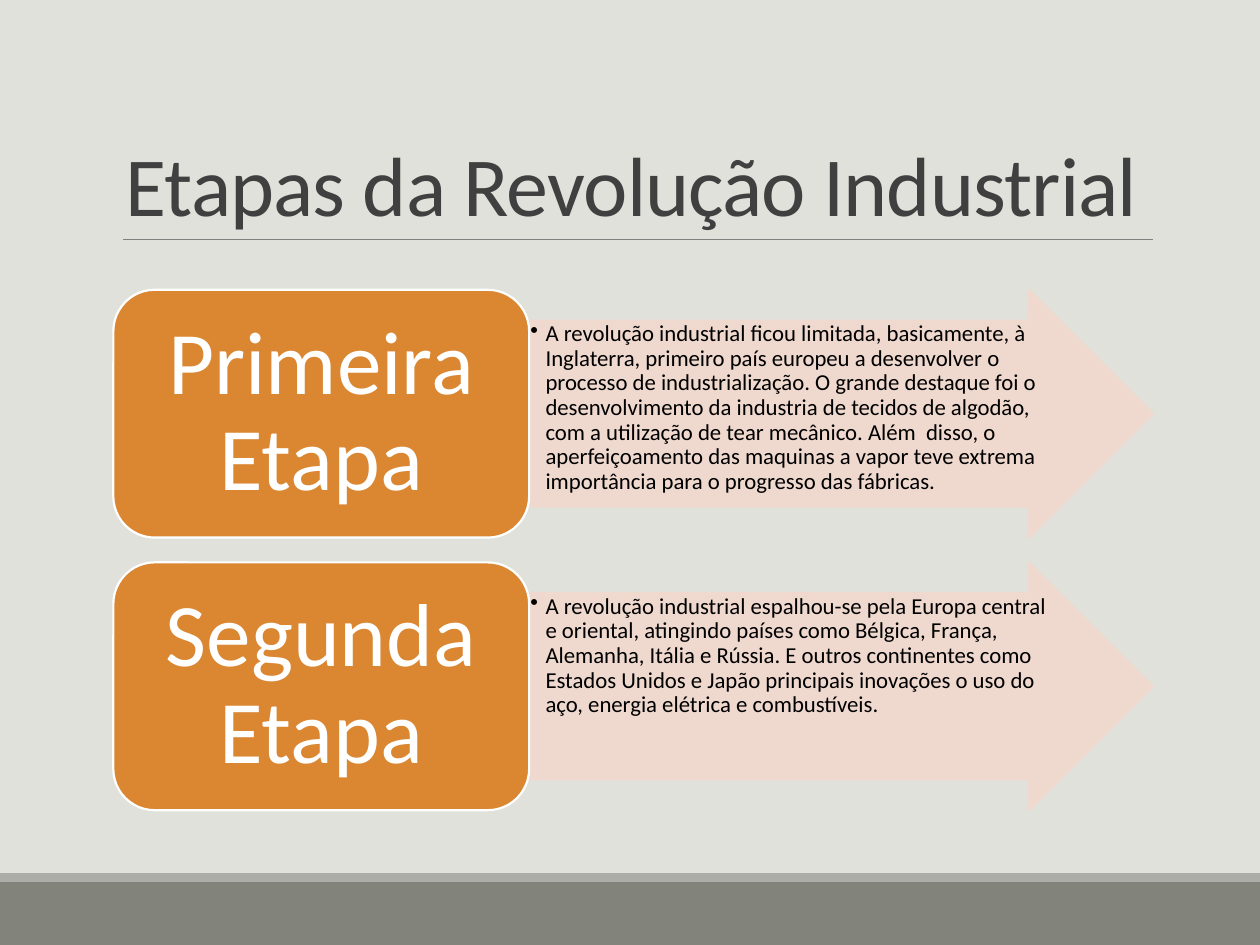
from dataclasses import dataclass

from lxml.etree import SubElement
from pptx import Presentation
from pptx.dml.color import RGBColor
from pptx.enum.shapes import MSO_CONNECTOR, MSO_SHAPE
from pptx.enum.text import MSO_ANCHOR, PP_ALIGN
from pptx.oxml.ns import qn
from pptx.util import Inches, Pt


@dataclass(frozen=True)
class Theme:
    """Colours, font and type sizes of the slide."""
    font: str = "Calibri"
    background: str = "E1E1DB"
    footer: str = "82847C"
    footer_edge: str = "ACADA8"
    rule: str = "808080"
    title: str = "404040"
    stage: str = "DB8631"
    arrow: str = "F1D9CE"
    white: str = "FFFFFF"
    body: str = "000000"
    title_size: float = 48
    stage_size: float = 51
    body_size: float = 13


THEME = Theme()

STAGES = [
    ("Primeira Etapa",
     "A revolução industrial ficou limitada, basicamente, à Inglaterra, primeiro país europeu "
     "a desenvolver o processo de industrialização. O grande destaque foi o desenvolvimento da "
     "industria de tecidos de algodão, com a utilização de tear mecânico. Além  disso, o "
     "aperfeiçoamento das maquinas a vapor teve extrema importância para o progresso das fábricas."),
    ("Segunda Etapa",
     "A revolução industrial espalhou-se pela Europa central e oriental, atingindo países como "
     "Bélgica, França, Alemanha, Itália e Rússia. E outros continentes como Estados Unidos e Japão "
     "principais inovações o uso do aço, energia elétrica e combustíveis."),
]


def rgb(color):
    """Turn a hex string into a colour."""
    return RGBColor.from_string(color)


def add_block(slide, preset, box, fill, line=None):
    """Add a flat preset shape in the box, outlined if a line colour is given."""
    block = slide.shapes.add_shape(preset, *map(Inches, box))
    block.shadow.inherit = False
    block.fill.solid()
    block.fill.fore_color.rgb = rgb(fill)
    if line:
        block.line.color.rgb = rgb(line)
        block.line.width = Pt(1.25)
    else:
        block.line.fill.background()
    return block


def write(shape, text, size, color, anchor, insets, spacing, align=PP_ALIGN.LEFT):
    """Write one paragraph into a shape and return it."""
    frame = shape.text_frame
    frame.word_wrap = True
    frame.vertical_anchor = anchor
    frame.margin_left = frame.margin_right = Inches(insets[0])
    frame.margin_top = frame.margin_bottom = Inches(insets[1])
    paragraph = frame.paragraphs[0]
    paragraph.text = text
    paragraph.alignment = align
    paragraph.line_spacing = spacing
    paragraph.font.name = THEME.font
    paragraph.font.size = Pt(size)
    paragraph.font.color.rgb = rgb(color)
    return paragraph


def add_title(slide, box, text):
    """Place the title at the bottom of the box, with a rule beneath it."""
    left, top, width, height = box
    heading = slide.shapes.add_textbox(*map(Inches, box))
    paragraph = write(heading, text, THEME.title_size, THEME.title,
                      MSO_ANCHOR.BOTTOM, (0.1, 0.05), 0.85)
    paragraph.runs[0].font._element.set("spc", "-50")
    bottom = Inches(top + height)
    rule = slide.shapes.add_connector(MSO_CONNECTOR.STRAIGHT, Inches(left + 0.08), bottom,
                                      Inches(left + width), bottom)
    rule.line.color.rgb = rgb(THEME.rule)
    rule.line.width = Pt(0.5)
    SubElement(rule._element.spPr, qn("a:effectLst"))


def add_footer(slide, box):
    """Fill the box with the footer band under its thin lighter edge."""
    left, top, width, height = box
    edge = 0.07
    add_block(slide, MSO_SHAPE.RECTANGLE, (left, top + edge, width, height - edge), THEME.footer)
    add_block(slide, MSO_SHAPE.RECTANGLE, (left, top, width, edge), THEME.footer_edge)


def add_stage(slide, box, name, description):
    """Place a stage name and the arrow describing it side by side in the box."""
    left, top, width, height = box
    name_width = width * 0.4
    arrow = add_block(slide, MSO_SHAPE.RIGHT_ARROW,
                      (left + name_width, top, width - name_width, height),
                      THEME.arrow, THEME.arrow)
    arrow.adjustments[0] = 0.75
    arrow.adjustments[1] = 0.5
    for color in arrow._element.spPr.iter(qn("a:srgbClr")):
        SubElement(color, qn("a:alpha"), val="90000")
    paragraph = write(arrow, description, THEME.body_size, THEME.body,
                      MSO_ANCHOR.TOP, (0.01, 0.01), 0.9)
    properties = paragraph._p.get_or_add_pPr()
    properties.set("marL", str(Inches(0.12)))
    properties.set("indent", str(Inches(-0.12)))
    bullet = SubElement(properties, qn("a:buChar"), char="•")
    properties.find(qn("a:defRPr")).addprevious(bullet)

    label = add_block(slide, MSO_SHAPE.ROUNDED_RECTANGLE, (left, top, name_width, height),
                      THEME.stage, THEME.white)
    write(label, name, THEME.stage_size, THEME.white,
          MSO_ANCHOR.MIDDLE, (0.21, 0.11), 0.9, PP_ALIGN.CENTER)


def add_stages(slide, box, stages):
    """Stack the stages in the box, with gaps a tenth of a stage high."""
    left, top, width, height = box
    stage_height = height / (len(stages) * 1.1 - 0.1)
    for index, (name, description) in enumerate(stages):
        stage_top = top + index * stage_height * 1.1
        add_stage(slide, (left, stage_top, width, stage_height), name, description)


def main():
    """Build and save the slide."""
    deck = Presentation()
    deck.slide_width, deck.slide_height = Inches(10), Inches(7.5)
    slide = deck.slides.add_slide(deck.slide_layouts[6])
    slide.background.fill.solid()
    slide.background.fill.fore_color.rgb = rgb(THEME.background)
    add_footer(slide, (0, 6.93, 10, 0.57))
    add_title(slide, (0.9, 0.31, 8.25, 1.59), "Etapas da Revolução Industrial")
    add_stages(slide, (0.9, 2.3, 8.25, 4.13), STAGES)
    deck.save("out.pptx")


if __name__ == "__main__":
    main()
